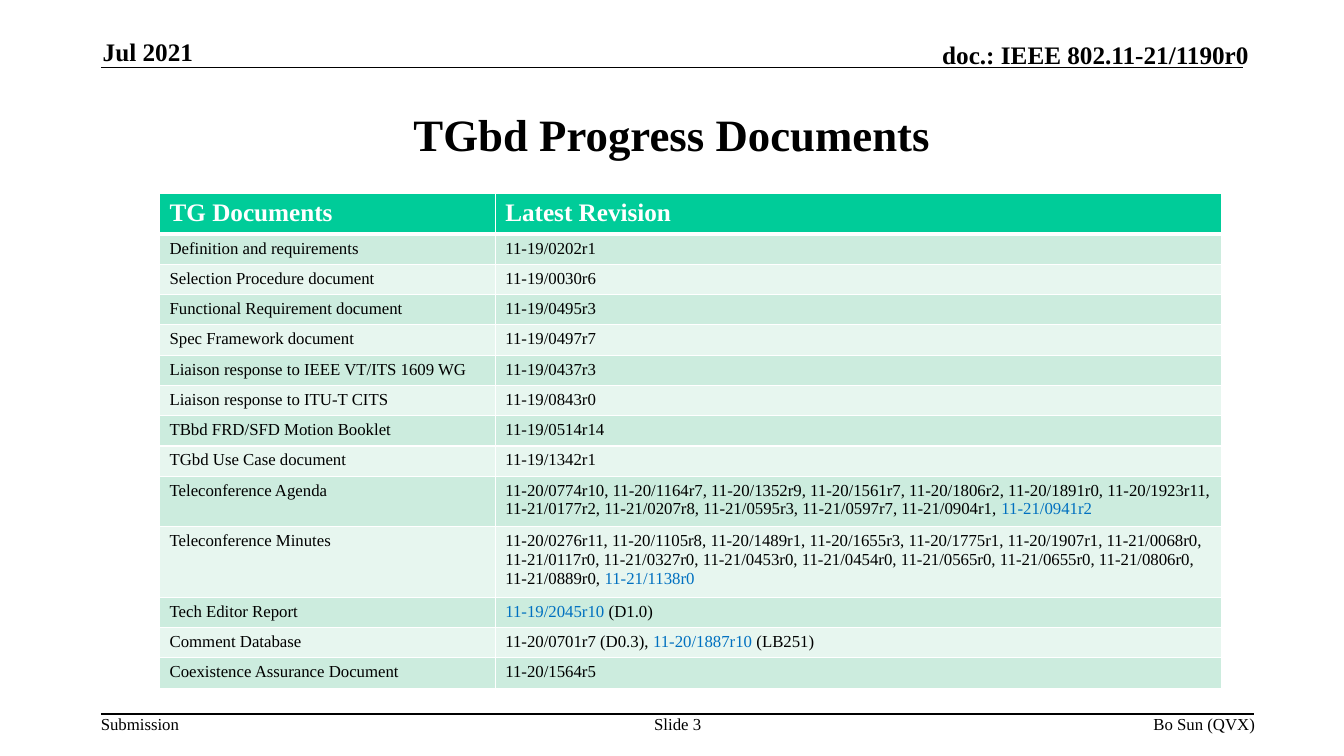
import pptx
import pptx.util
import pptx.dml.color
import pptx.enum.shapes
import pptx.enum.text
import pptx.oxml
import pptx.oxml.ns
from dataclasses import dataclass

Cm = pptx.util.Cm
Pt = pptx.util.Pt
Align = pptx.enum.text.PP_ALIGN
Anchor = pptx.enum.text.MSO_ANCHOR


@dataclass(frozen=True)
class Theme:
    font: str = "Times New Roman"
    ink: str = "000000"
    white: str = "FFFFFF"
    latest: str = "0070C0"
    header: str = "00CC99"
    bands: tuple = ("CCECDE", "E7F6EF")
    title_size: int = 32
    heading_size: int = 18
    body_size: int = 12


THEME = Theme()

TITLE = "TGbd Progress Documents"
HEADINGS = ("TG Documents", "Latest Revision")
AGENDAS = (
    "11-20/0774r10, 11-20/1164r7, 11-20/1352r9, 11-20/1561r7, 11-20/1806r2, "
    "11-20/1891r0, 11-20/1923r11, 11-21/0177r2, 11-21/0207r8, 11-21/0595r3, "
    "11-21/0597r7, 11-21/0904r1, "
)
MINUTES = (
    "11-20/0276r11, 11-20/1105r8, 11-20/1489r1, 11-20/1655r3, 11-20/1775r1, "
    "11-20/1907r1, 11-21/0068r0, 11-21/0117r0, 11-21/0327r0, 11-21/0453r0, "
    "11-21/0454r0, 11-21/0565r0, 11-21/0655r0, 11-21/0806r0, 11-21/0889r0, "
)


def old(text):
    return text, THEME.ink


def new(text):
    return text, THEME.latest


DOCUMENTS = [
    ("Definition and requirements", [old("11-19/0202r1")]),
    ("Selection Procedure document", [old("11-19/0030r6")]),
    ("Functional Requirement document", [old("11-19/0495r3")]),
    ("Spec Framework document", [old("11-19/0497r7")]),
    ("Liaison response to IEEE VT/ITS 1609 WG", [old("11-19/0437r3")]),
    ("Liaison response to ITU-T CITS", [old("11-19/0843r0")]),
    ("TBbd FRD/SFD Motion Booklet", [old("11-19/0514r14")]),
    ("TGbd Use Case document", [old("11-19/1342r1")]),
    ("Teleconference Agenda", [old(AGENDAS), new("11-21/0941r2")]),
    ("Teleconference Minutes", [old(MINUTES), new("11-21/1138r0")]),
    ("Tech Editor Report", [new("11-19/2045r10 "), old("(D1.0)")]),
    ("Comment Database", [old("11-20/0701r7 (D0.3), "), new("11-20/1887r10"), old(" (LB251)")]),
    ("Coexistence Assurance Document", [old("11-20/1564r5")]),
]

HEADER_HEIGHT, LINE_HEIGHT, CELL_PADDING = 0.93, 0.47, 0.25
LINE_COUNTS = {"Teleconference Agenda": 2, "Teleconference Minutes": 3}
COLUMN_WIDTHS = (8.46, 18.31)
TABLE_LEFT, TABLE_TOP = 4.02, 4.88

LABELS = [
    ("Jul 2021", (2.59, 0.91, 6.93, 0.76), Align.LEFT, Anchor.BOTTOM, THEME.heading_size, True),
    ("doc.: IEEE 802.11-21/1190r0", (18.52, 0.99, 12.95, 0.76), Align.RIGHT, Anchor.BOTTOM,
     THEME.heading_size, True),
    ("Submission", (2.54, 17.98, 2.01, 0.51), Align.LEFT, Anchor.TOP, THEME.body_size, False),
    ("Slide 3", (16.1, 17.98, 1.96, 1.02), Align.CENTER, Anchor.TOP, THEME.body_size, False),
    ("Bo Sun (QVX)", (19.84, 17.98, 11.79, 0.51), Align.RIGHT, Anchor.TOP, THEME.body_size, False),
]
RULES = [(2.54, 31.32, 1.7), (2.54, 31.6, 17.99)]


def color(value):
    return pptx.dml.color.RGBColor.from_string(value)


def write(para, text, size, bold=False, ink=THEME.ink):
    span = para.add_run()
    span.text = text
    span.font.name = THEME.font
    span.font.size = Pt(size)
    span.font.bold = bold
    span.font.color.rgb = color(ink)


def add_label(page, text, place, align, anchor, size, bold):
    frame = page.shapes.add_textbox(*map(Cm, place)).text_frame
    frame.word_wrap = True
    frame.vertical_anchor = anchor
    frame.margin_left = frame.margin_right = frame.margin_top = frame.margin_bottom = 0
    para = frame.paragraphs[0]
    para.alignment = align
    write(para, text, size, bold)


def add_rule(page, left, right, height):
    line = page.shapes.add_connector(
        pptx.enum.shapes.MSO_CONNECTOR.STRAIGHT, Cm(left), Cm(height), Cm(right), Cm(height))
    line.line.color.rgb = color(THEME.ink)
    line.line.width = Pt(1)
    line._element.spPr.append(pptx.oxml.parse_xml(
        f"<a:effectLst {pptx.oxml.ns.nsdecls('a')}/>"))


def dress_cell(cell, fill, top, bottom):
    properties = cell._tc.get_or_add_tcPr()
    for side, width in (("L", 1), ("R", 1), ("T", top), ("B", bottom)):
        properties.append(pptx.oxml.parse_xml(
            f'<a:ln{side} {pptx.oxml.ns.nsdecls("a")} w="{Pt(width)}"><a:solidFill>'
            f'<a:srgbClr val="{THEME.white}"/></a:solidFill></a:ln{side}>'))
    cell.fill.solid()
    cell.fill.fore_color.rgb = color(fill)


def add_documents(page):
    heights = [HEADER_HEIGHT] + [
        LINE_HEIGHT * LINE_COUNTS.get(name, 1) + CELL_PADDING for name, _ in DOCUMENTS]
    table = page.shapes.add_table(
        len(heights), len(COLUMN_WIDTHS), Cm(TABLE_LEFT), Cm(TABLE_TOP),
        Cm(sum(COLUMN_WIDTHS)), Cm(sum(heights))).table
    for column, width in zip(table.columns, COLUMN_WIDTHS):
        column.width = Cm(width)
    for row, height in zip(table.rows, heights):
        row.height = Cm(height)
    for cell, heading in zip(table.rows[0].cells, HEADINGS):
        dress_cell(cell, THEME.header, 1, 3)
        write(cell.text_frame.paragraphs[0], heading, THEME.heading_size, True, THEME.white)
    for index, (name, revisions) in enumerate(DOCUMENTS):
        for cell, spans in zip(table.rows[index + 1].cells, ([old(name)], revisions)):
            dress_cell(cell, THEME.bands[index % 2], 1 if index else 3, 1)
            for text, ink in spans:
                write(cell.text_frame.paragraphs[0], text, THEME.body_size, ink=ink)


def main():
    deck = pptx.Presentation()
    deck.slide_width, deck.slide_height = Cm(33.87), Cm(19.05)
    page = deck.slides.add_slide(deck.slide_layouts[5])
    for rule in RULES:
        add_rule(page, *rule)
    title = page.shapes.title
    title.left, title.top, title.width, title.height = map(Cm, (2.54, 1.9, 28.78, 2.95))
    title.text_frame.vertical_anchor = Anchor.MIDDLE
    para = title.text_frame.paragraphs[0]
    para.alignment = Align.CENTER
    write(para, TITLE, THEME.title_size, True)
    for label in LABELS:
        add_label(page, *label)
    add_documents(page)
    deck.save("out.pptx")


if __name__ == "__main__":
    main()
